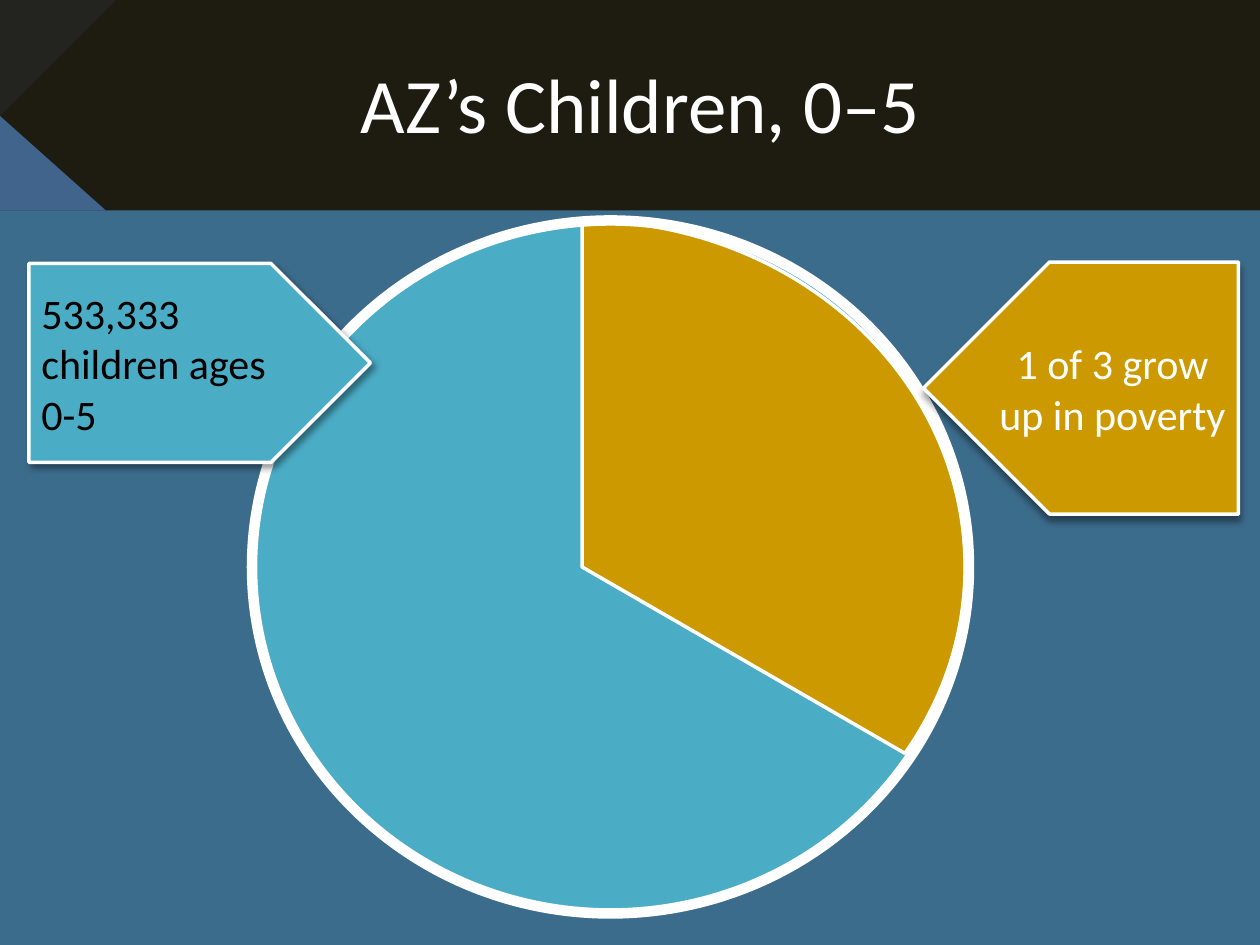
from lxml import etree
from pptx import Presentation
from pptx.dml.color import RGBColor
from pptx.enum.shapes import MSO_SHAPE
from pptx.enum.text import MSO_ANCHOR, PP_ALIGN
from pptx.oxml.ns import qn
from pptx.util import Inches, Pt

RECT = MSO_SHAPE.RECTANGLE
WEDGE = MSO_SHAPE.RIGHT_TRIANGLE
DISC = MSO_SHAPE.OVAL
PIE = MSO_SHAPE.PIE
ARROW = MSO_SHAPE.PENTAGON
MIDDLE = MSO_ANCHOR.MIDDLE
LEFT, CENTER = PP_ALIGN.LEFT, PP_ALIGN.CENTER

WHITE, BLACK = "FFFFFF", "000000"
TEAL, GOLD = "4BACC6", "CC9900"


def color(code):
    return RGBColor.from_string(code)


class Deck:
    font = "Calibri"

    def __init__(self, wide, high, back):
        self.file = Presentation()
        self.file.slide_width = Inches(wide)
        self.file.slide_height = Inches(high)
        self.slide = self.file.slides.add_slide(self.file.slide_layouts[6])
        fill = self.slide.background.fill
        fill.solid()
        fill.fore_color.rgb = color(back)

    def shape(self, kind, box, fill=None, line=None, width=2, alpha=None, home=None):
        home = home or self.slide.shapes
        item = home.add_shape(kind, *map(Inches, box))
        item.shadow.inherit = False
        if fill:
            item.fill.solid()
            item.fill.fore_color.rgb = color(fill)
        else:
            item.fill.background()
        if alpha:
            tone = item._element.spPr.find(qn("a:solidFill"))[0]
            etree.SubElement(tone, qn("a:alpha"), val=str(alpha * 1000))
        if line:
            item.line.color.rgb = color(line)
            item.line.width = Pt(width)
        else:
            item.line.fill.background()
        return item

    def letter(self, item, text, size, ink, align):
        frame = item.text_frame
        frame.text = text
        frame.word_wrap = True
        frame.vertical_anchor = MIDDLE
        for para in frame.paragraphs:
            para.alignment = align
            for run in para.runs:
                run.font.name = self.font
                run.font.size = Pt(size)
                run.font.color.rgb = color(ink)

    def title(self, box, text):
        item = self.slide.shapes.add_textbox(*map(Inches, box))
        self.letter(item, text, 44, WHITE, CENTER)

    def label(self, box, text, fill, ink, align, angle, flip=False):
        item = self.shape(ARROW, box, fill, WHITE)
        if flip:
            item._element.spPr.xfrm.set("flipH", "1")
        self.shade(item, angle)
        self.letter(item, text, 24, ink, align)

    def shade(self, item, angle):
        effect = item._element.spPr.find(qn("a:effectLst"))
        drop = etree.SubElement(
            effect, qn("a:outerShdw"), blurRad=str(Pt(4)), dist=str(Pt(3)),
            dir=str(angle * 60000), rotWithShape="0")
        tone = etree.SubElement(drop, qn("a:srgbClr"), val=BLACK)
        etree.SubElement(tone, qn("a:alpha"), val="40000")

    def slice(self, box, patch, fill):
        group = self.slide.shapes.add_group_shape()
        pie = self.shape(PIE, box, fill, WHITE, home=group.shapes)
        # Angles from 270 to 30 degrees, in units of 100000
        pie.adjustments[0], pie.adjustments[1] = 162, 18
        self.shape(RECT, patch, fill, home=group.shapes)


def main():
    deck = Deck(10, 7.5, "3C6C8C")

    # Header band with corner wedges
    deck.shape(RECT, (0, 0, 10, 1.67), "1E1C11")
    deck.shape(WEDGE, (0, 0.92, 0.84, 0.75), "4F81BD", alpha=72)
    corner = deck.shape(WEDGE, (0, 0, 0.92, 0.92), "262626", alpha=72)
    corner.rotation = 90
    deck.title((0.67, 0.08, 8.83, 1.47), "AZ’s Children, 0–5")

    # Disc, one-third slice and white ring
    deck.shape(DISC, (2, 1.75, 5.67, 5.5), TEAL, "377F92")
    deck.slice((1.58, 1.75, 6.08, 5.5), (4.79, 2.92, 2.17, 1.64), GOLD)
    deck.shape(DISC, (2, 1.75, 5.69, 5.5), line=WHITE, width=6)

    # Arrow labels
    deck.label((0.23, 2.09, 2.71, 1.58), "533,333 children ages\n0-5",
               TEAL, BLACK, LEFT, 45)
    deck.label((7.33, 2.08, 2.5, 2), "1 of 3 grow up in poverty",
               GOLD, WHITE, CENTER, 90, flip=True)

    deck.file.save("out.pptx")


if __name__ == "__main__":
    main()
